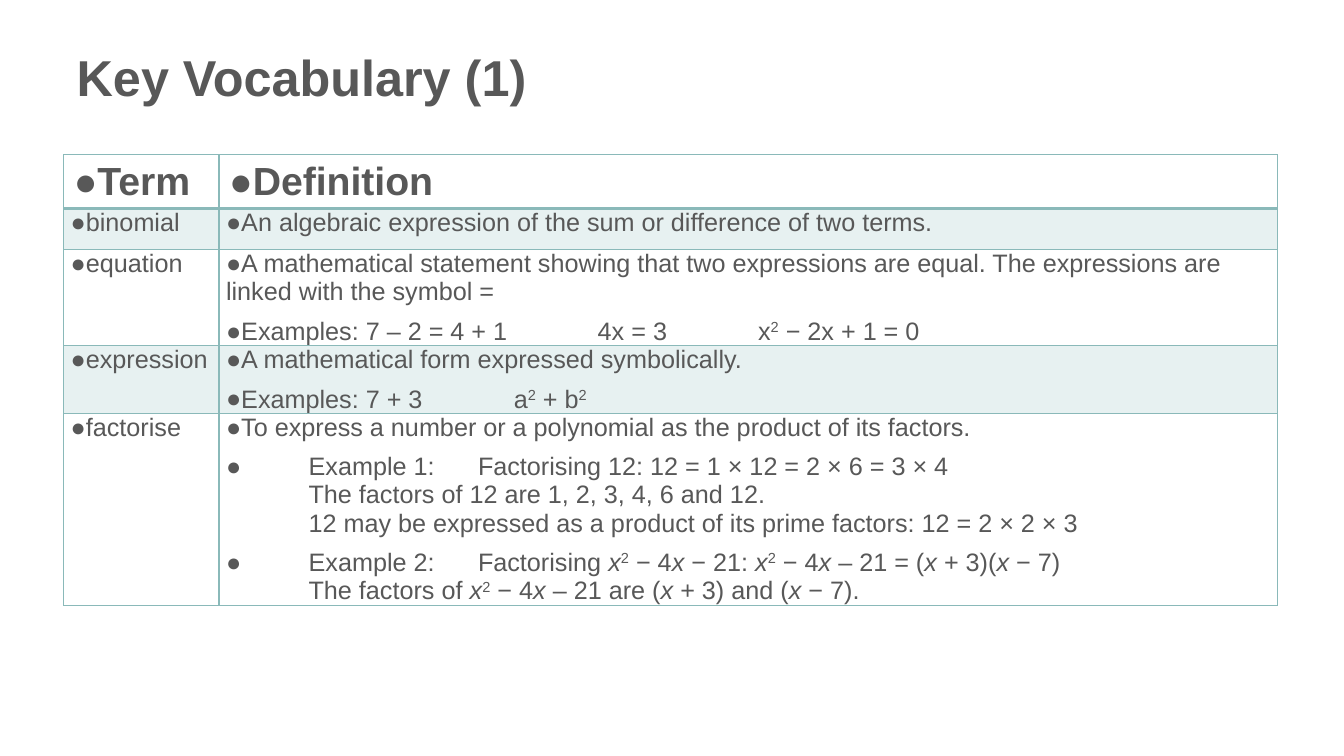
import pptx
import pptx.dml.color
import pptx.enum.text
import pptx.oxml
import pptx.oxml.ns
import pptx.util
from lxml import etree

Pt = pptx.util.Pt
qn = pptx.oxml.ns.qn
GREY = pptx.dml.color.RGBColor(0x58, 0x58, 0x58)
TEAL = pptx.dml.color.RGBColor(0x8A, 0xB9, 0xB9)

HEADER = ["Term", "Definition"]
ROWS = [
    ("binomial", ["An algebraic expression of the sum or difference of two terms."]),
    ("equation", [
        "A mathematical statement showing that two expressions are equal. "
        "The expressions are linked with the symbol =",
        "Examples: 7 – 2 = 4 + 1\t4x = 3\tx|^2| − 2x + 1 = 0"]),
    ("expression", [
        "A mathematical form expressed symbolically.",
        "Examples: 7 + 3\ta|^2| + b|^2"]),
    ("factorise", [
        "To express a number or a polynomial as the product of its factors.",
        "Example 1:\tFactorising 12: 12 = 1 × 12 = 2 × 6 = 3 × 4|\n|"
        "The factors of 12 are 1, 2, 3, 4, 6 and 12.|\n|"
        "12 may be expressed as a product of its prime factors: 12 = 2 × 2 × 3",
        "Example 2:\tFactorising |*x|^2| − 4|*x| − 21: |*x|^2| − 4|*x| – 21 = (|*x| + 3)(|*x| − 7)|\n|"
        "The factors of |*x|^2| − 4|*x| – 21 are (|*x| + 3) and (|*x| − 7)."]),
]
TABS = {"Examples: 7 –": [265.5, 380], "Examples: 7 +": [205.5]}
ROW_HEIGHTS = [38.5, 29.5, 68.5, 48, 137]


def add_runs(p, text, size, bold=False):
    for part in text.split("|"):
        if part == "\n":
            p.add_line_break()
            continue
        r = p.add_run()
        r.text = part.lstrip("*^")
        r.font.name = "Arial"
        r.font.size = Pt(size)
        r.font.bold = bold
        r.font.italic = part.startswith("*")
        r.font.color.rgb = GREY
        if part.startswith("^"):
            r.font._element.set("baseline", "30000")


def fill_cell(cell, paragraphs, row):
    header = row == 0
    if not header:
        cell.margin_left = cell.margin_right = Pt(5)
        cell.margin_top = cell.margin_bottom = Pt(0)
    tf = cell.text_frame
    for i, text in enumerate(paragraphs):
        p = tf.paragraphs[0] if i == 0 else tf.add_paragraph()
        pPr = p._p.get_or_add_pPr()
        indent = Pt(59) if text.startswith("Example ") else 0
        pPr.set("marL", str(indent))
        pPr.set("indent", str(-indent))
        etree.SubElement(pPr, qn("a:buFont"), typeface="Arial")
        etree.SubElement(pPr, qn("a:buChar"), char="●")
        stops = TABS.get(text[:13], [])
        if stops:
            tabs = etree.SubElement(pPr, qn("a:tabLst"))
            for stop in stops:
                etree.SubElement(tabs, qn("a:tab"), pos=str(Pt(stop)), algn="l")
        if i > 0:
            p.space_before = Pt(4)
        if not header:
            p.space_after = Pt(4)
        add_runs(p, text, 28 if header else 18, header)

    tcPr = cell._tc.get_or_add_tcPr()
    if row % 2:
        cell.fill.solid()
        cell.fill.fore_color.rgb = TEAL
        etree.SubElement(tcPr.find(".//" + qn("a:srgbClr")), qn("a:alpha"), val="20000")
    else:
        cell.fill.background()
    for i, side in enumerate("LRTB"):
        thick = (row, side) in [(0, "B"), (1, "T")]
        ln = etree.Element(qn("a:ln" + side), w=str(Pt(2 if thick else 1)))
        solid = etree.SubElement(ln, qn("a:solidFill"))
        etree.SubElement(solid, qn("a:srgbClr"), val=str(TEAL))
        tcPr.insert(i, ln)


prs = pptx.Presentation()
prs.slide_width, prs.slide_height = Pt(960), Pt(540)
s = prs.slides.add_slide(prs.slide_layouts[5])

title = s.shapes.title
title.left, title.top, title.width, title.height = Pt(47.5), Pt(34), Pt(864), Pt(77)
tf = title.text_frame
tf.word_wrap = True
tf.auto_size = pptx.enum.text.MSO_AUTO_SIZE.NONE
tf.vertical_anchor = pptx.enum.text.MSO_ANCHOR.TOP
p = tf.paragraphs[0]
p.alignment = pptx.enum.text.PP_ALIGN.LEFT
p.line_spacing = 0.9
add_runs(p, "Key Vocabulary (1)", 36, True)

table = s.shapes.add_table(len(ROWS) + 1, 2, Pt(45.5), Pt(110.5), Pt(867), Pt(sum(ROW_HEIGHTS))).table
table.first_row = False
table.horz_banding = False
table.columns[0].width, table.columns[1].width = Pt(111), Pt(756)
for row, height in enumerate(ROW_HEIGHTS):
    table.rows[row].height = Pt(height)

for col, heading in enumerate(HEADER):
    fill_cell(table.cell(0, col), [heading], 0)
for row, (term, definition) in enumerate(ROWS, 1):
    fill_cell(table.cell(row, 0), [term], row)
    fill_cell(table.cell(row, 1), definition, row)

prs.save("out.pptx")
